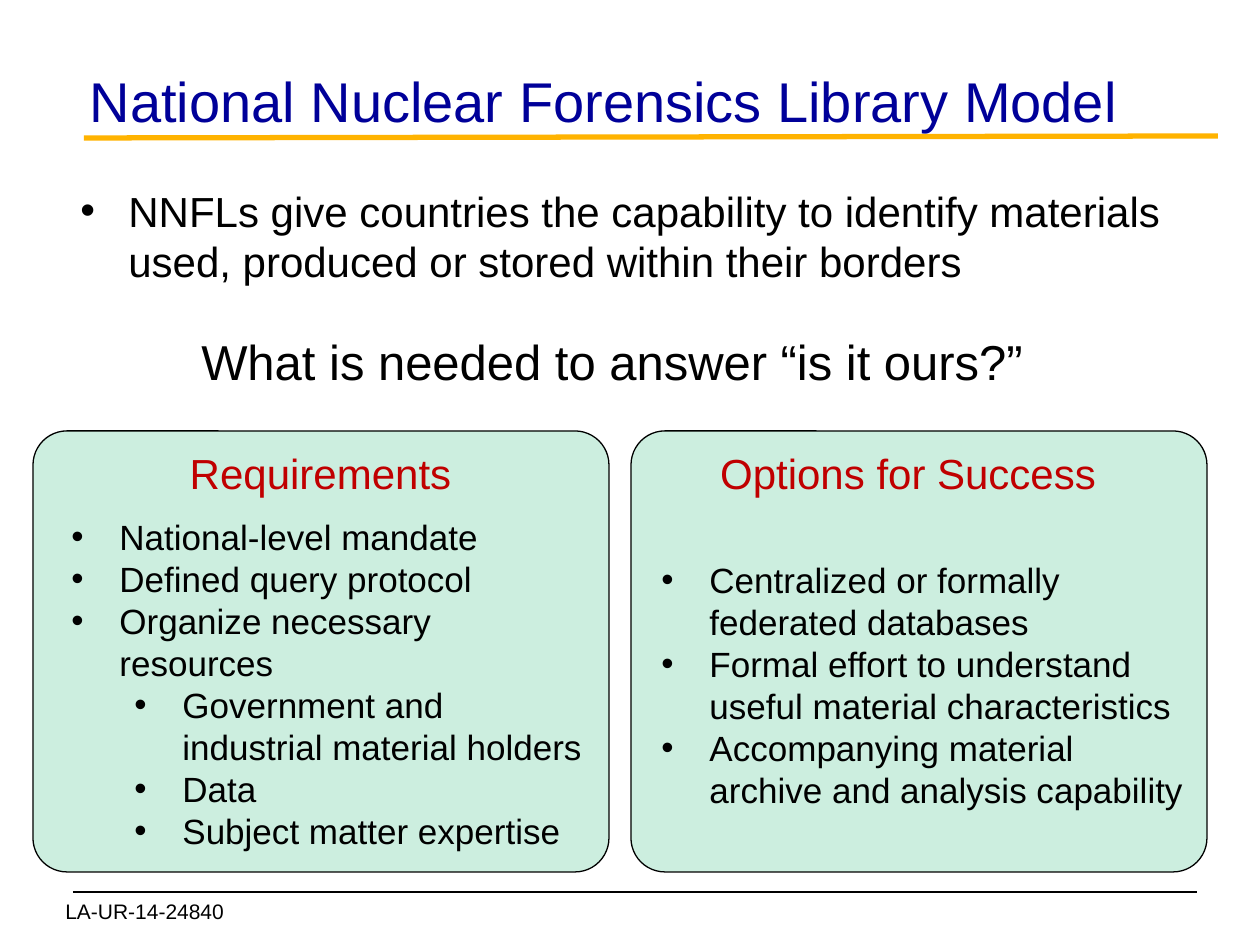
from lxml import etree
from pptx import Presentation, util as u
from pptx.dml.color import RGBColor
from pptx.enum import shapes, text
from pptx.oxml import ns

SCALE = 914400 / 126
FONT = "Arial"
INDENT = 48
COLORS = {
    "black": "000000",
    "navy": "000099",
    "gold": "FFB300",
    "mint": "CCEEDF",
    "red": "C00000",
}
NEEDS = [
    ("National-level mandate", 0),
    ("Defined query protocol", 0),
    ("Organize necessary resources", 0),
    ("Government and industrial material holders", 1),
    ("Data", 1),
    ("Subject matter expertise", 1),
]
OPTIONS = [
    ("Centralized or formally federated databases", 0),
    ("Formal effort to understand useful material characteristics", 0),
    ("Accompanying material archive and analysis capability", 0),
]


def px(n):
    return u.Emu(round(n * SCALE))


def rgb(name):
    return RGBColor.from_string(COLORS[name])


def add_rule(slide, start, end, color, width):
    rule = slide.shapes.add_connector(
        shapes.MSO_CONNECTOR.STRAIGHT, *map(px, start + end))
    rule.line.color.rgb = rgb(color)
    rule.line.width = u.Pt(width)
    etree.SubElement(rule._element.spPr, ns.qn("a:effectLst"))


def add_card(slide, left, top, width, height):
    card = slide.shapes.add_shape(
        shapes.MSO_SHAPE.ROUNDED_RECTANGLE, *map(px, (left, top, width, height)))
    card.adjustments[0] = 0.077
    card.shadow.inherit = False
    card.fill.solid()
    card.fill.fore_color.rgb = rgb("mint")
    card.line.color.rgb = rgb("black")
    card.line.width = u.Pt(0.75)


def add_frame(slide, area):
    frame = slide.shapes.add_textbox(*map(px, area)).text_frame
    frame.word_wrap = True
    return frame


def add_run(para, words, size, color):
    run = para.add_run()
    run.text = words
    run.font.name = FONT
    run.font.size = u.Pt(size)
    run.font.color.rgb = rgb(color)


def add_label(slide, area, words, size, color="black", align="CENTER"):
    frame = add_frame(slide, area)
    para = frame.paragraphs[0]
    para.alignment = getattr(text.PP_ALIGN, align)
    add_run(para, words, size, color)
    return frame


def add_list(slide, area, items, size):
    frame = add_frame(slide, area)
    for i, (words, level) in enumerate(items):
        para = frame.add_paragraph() if i else frame.paragraphs[0]
        para.level = level
        props = para._p.get_or_add_pPr()
        props.set("marL", str(px(INDENT + 63 * level)))
        props.set("indent", str(px(-INDENT)))
        etree.SubElement(props, ns.qn("a:buFont"), typeface=FONT)
        etree.SubElement(props, ns.qn("a:buChar"), char="•")
        add_run(para, words, size, "black")


def main():
    deck = Presentation()
    deck.slide_width, deck.slide_height = px(1260), px(945)
    slide = deck.slides.add_slide(deck.slide_layouts[6])

    add_rule(slide, (73, 892), (1197, 892), "black", 0.75)
    add_rule(slide, (84, 138), (1218, 136), "gold", 3)
    add_label(slide, (53, 892, 252, 63), "LA-UR-14-24840", 12, align="LEFT")
    for left in (33, 631):
        add_card(slide, left, 431, 576, 441)

    title = add_label(slide, (32, 53, 1144, 94),
                      "National Nuclear Forensics Library Model", 32, "navy")
    title.vertical_anchor = text.MSO_ANCHOR.MIDDLE
    add_list(slide, (68, 179, 1149, 220), [
        ("NNFLs give countries the capability to identify materials "
         "used, produced or stored within their borders", 0)], 24)
    add_label(slide, (105, 441, 431, 63), "Requirements", 24, "red")
    add_label(slide, (672, 441, 472, 63), "Options for Success", 24, "red")
    add_list(slide, (59, 509, 538, 352), NEEDS, 20)
    add_list(slide, (649, 552, 558, 310), OPTIONS, 20)
    add_label(slide, (59, 325, 1106, 72),
              "What is needed to answer “is it ours?”", 28)
    deck.save("out.pptx")


if __name__ == "__main__":
    main()
